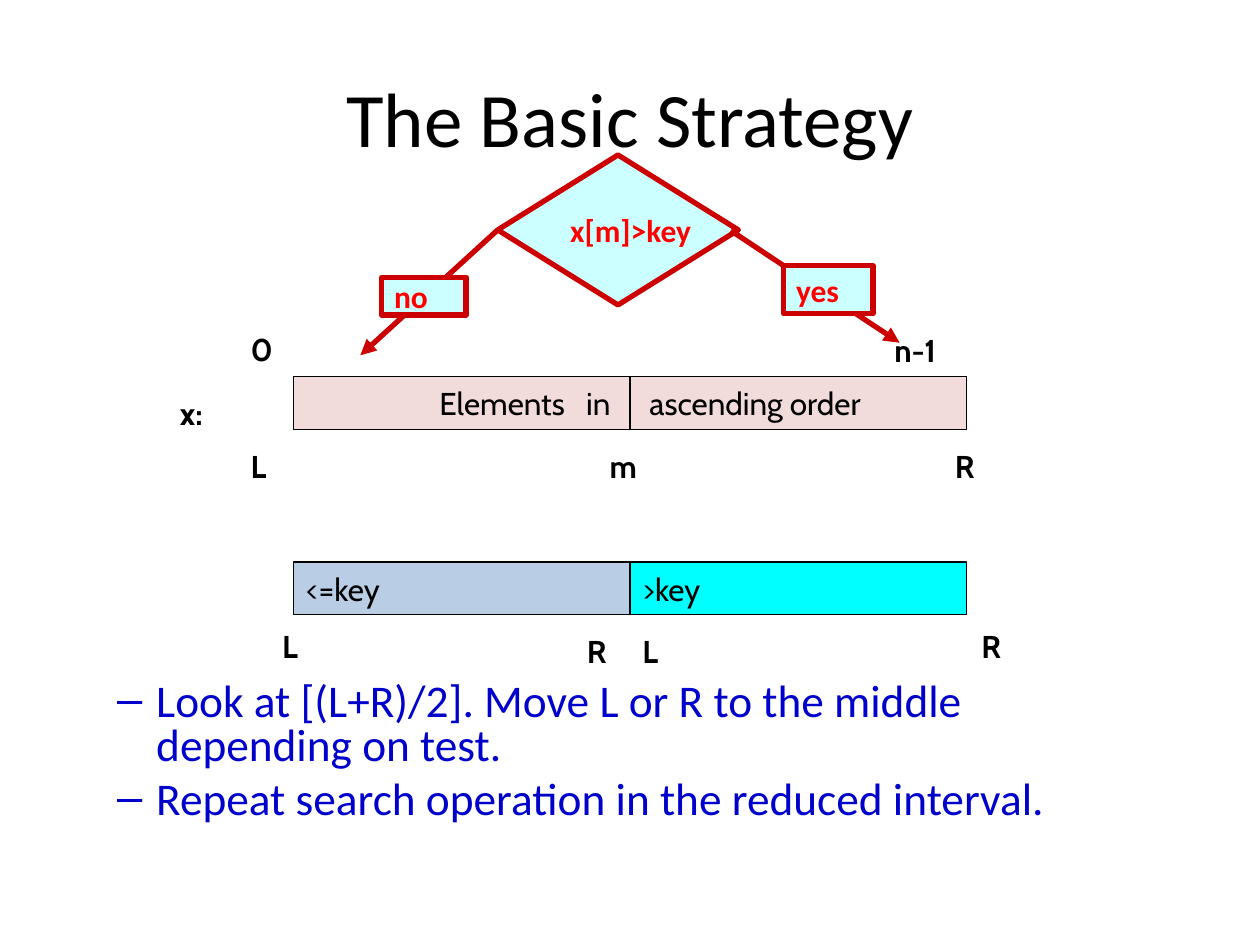
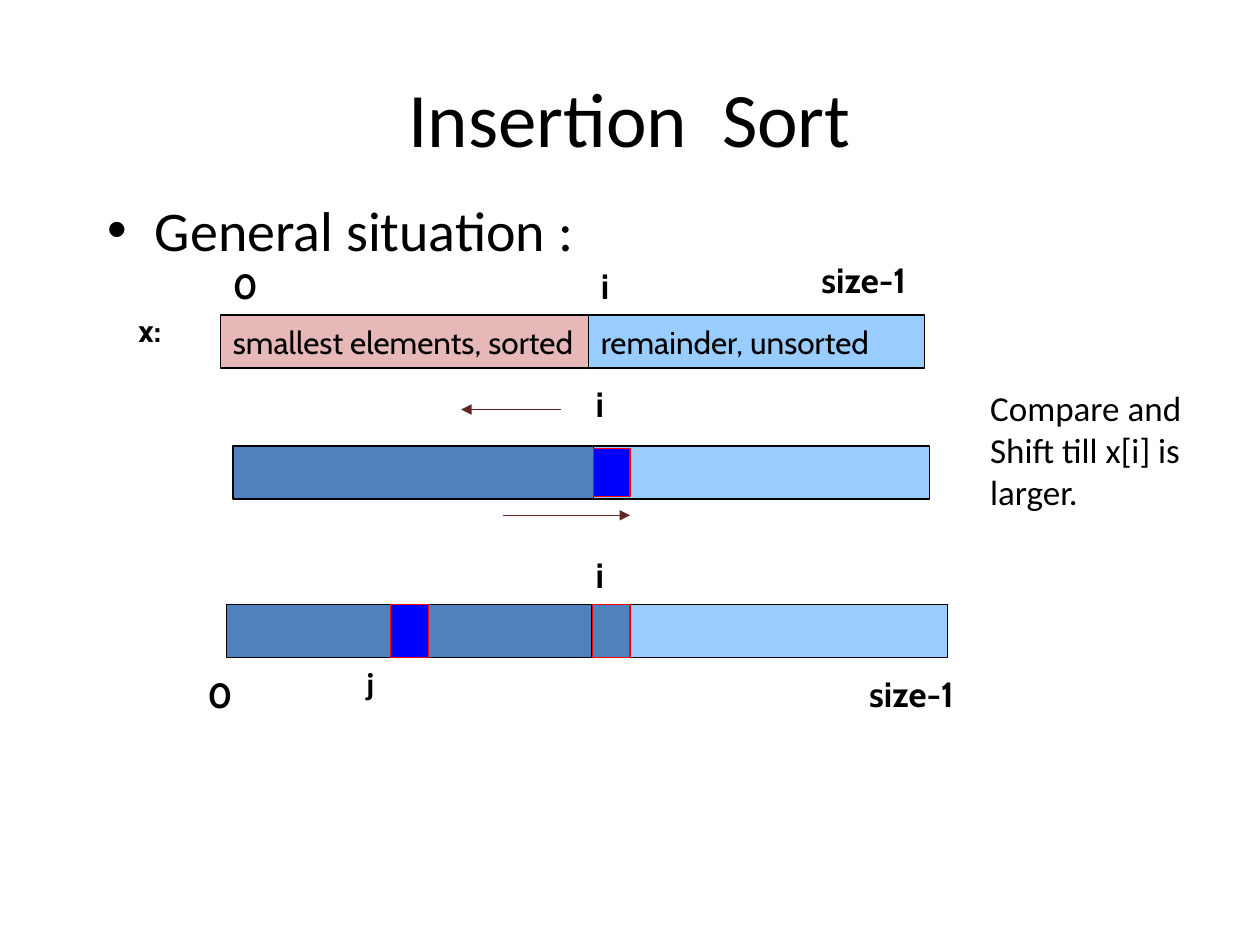
from lxml import etree
from pptx import Presentation
from pptx.dml.color import RGBColor
from pptx.enum.shapes import MSO_CONNECTOR, MSO_SHAPE
from pptx.enum.text import MSO_ANCHOR, MSO_AUTO_SIZE, PP_ALIGN
from pptx.oxml.ns import qn
from pptx.util import Inches, Pt

LEFT, CENTER, RIGHT = PP_ALIGN.LEFT, PP_ALIGN.CENTER, PP_ALIGN.RIGHT
MIDDLE = MSO_ANCHOR.MIDDLE
NO_FIT = MSO_AUTO_SIZE.NONE
STRAIGHT = MSO_CONNECTOR.STRAIGHT
RECTANGLE, DECISION = MSO_SHAPE.RECTANGLE, MSO_SHAPE.FLOWCHART_DECISION
LEFT_SIDE = 1

BLACK = RGBColor(0x00, 0x00, 0x00)
RED = RGBColor(0xFF, 0x00, 0x00)
DARK_RED = RGBColor(0xCC, 0x00, 0x00)
MAROON = RGBColor(0x63, 0x25, 0x23)
PALE_CYAN = RGBColor(0xCC, 0xFF, 0xFF)
CYAN = RGBColor(0x00, 0xFF, 0xFF)
PALE_PINK = RGBColor(0xF2, 0xDC, 0xDB)
PINK = RGBColor(0xE6, 0xB9, 0xB8)
PALE_BLUE = RGBColor(0xB9, 0xCD, 0xE5)
SKY_BLUE = RGBColor(0x99, 0xCC, 0xFF)
STEEL_BLUE = RGBColor(0x4F, 0x81, 0xBD)
BLUE = RGBColor(0x00, 0x00, 0xFF)
LIST_BLUE = RGBColor(0x00, 0x00, 0xCC)

BODY_FONT, LABEL_FONT = "Calibri", "Cabin"
CELL_HEIGHT = 0.42


def write_text(frame, text, font=LABEL_FONT, size=18, color=BLACK, bold=False,
               align=LEFT, wrap=False):
    frame.word_wrap = wrap
    frame.auto_size = NO_FIT
    for index, line in enumerate(text.split("\n")):
        paragraph = frame.add_paragraph() if index else frame.paragraphs[0]
        paragraph.alignment = align
        run = paragraph.add_run()
        run.text = line
        run.font.name = font
        run.font.size = Pt(size)
        run.font.bold = bold
        run.font.color.rgb = color


def place(shape, left, top, width, height):
    shape.left, shape.top = Inches(left), Inches(top)
    shape.width, shape.height = Inches(width), Inches(height)


def add_titled_slide(presentation, title):
    slide = presentation.slides.add_slide(presentation.slide_layouts[1])
    place(slide.shapes.title, 0.5, 0.3, 9, 1.25)
    frame = slide.shapes.title.text_frame
    frame.vertical_anchor = MIDDLE
    write_text(frame, title, font=BODY_FONT, size=44, align=CENTER, wrap=True)
    return slide


def fill_list(slide, box, text, bullet, level, margin, hanging, spacing, **text_format):
    body = slide.placeholders[1]
    place(body, *box)
    write_text(body.text_frame, text, font=BODY_FONT, wrap=True, **text_format)
    for index, paragraph in enumerate(body.text_frame.paragraphs):
        paragraph.level = level
        paragraph.line_spacing = spacing
        paragraph.space_before = Pt(6 if index else 0)
        properties = paragraph._p.get_or_add_pPr()
        properties.set("marL", str(Inches(margin)))
        properties.set("indent", str(-Inches(hanging)))
        etree.SubElement(properties, qn("a:buChar"), char=bullet)


def add_label(slide, text, left, top, width=0.5, height=0.43, bold=True, **text_format):
    label = slide.shapes.add_textbox(Inches(left), Inches(top), Inches(width), Inches(height))
    write_text(label.text_frame, text, bold=bold, **text_format)


def add_box(slide, box, fill, line=BLACK, line_width=0.75, text="", kind=RECTANGLE,
            **text_format):
    shape = slide.shapes.add_shape(kind, *map(Inches, box))
    shape.shadow.inherit = False
    shape.fill.solid()
    shape.fill.fore_color.rgb = fill
    shape.line.color.rgb = line
    shape.line.width = Pt(line_width)
    if text:
        shape.text_frame.vertical_anchor = MIDDLE
        write_text(shape.text_frame, text, **text_format)
    return shape


def add_arrow(slide, start, end, color, width):
    arrow = slide.shapes.add_connector(STRAIGHT, *map(Inches, start + end))
    arrow.line.color.rgb = color
    arrow.line.width = Pt(width)
    etree.SubElement(arrow.line._get_or_add_ln(), qn("a:tailEnd"), type="triangle")
    etree.SubElement(arrow._element.spPr, qn("a:effectLst"))
    return arrow


def add_array(slide, left, top, cells):
    placed = []
    for width, style in cells:
        placed.append(((left, top, width, CELL_HEIGHT), style))
        left += width
    for box, style in sorted(placed, key=lambda cell: cell[1].get("line") == RED):
        add_box(slide, box, **style)


def add_decision(slide, left, top):
    style = dict(fill=PALE_CYAN, line=DARK_RED, line_width=3, font=BODY_FONT,
                 color=RED, bold=True)
    diamond = add_box(slide, (left, top, 1.91, 1.19), text="x[m]>key", kind=DECISION, **style)
    no_arrow = add_arrow(slide, (left, top + 0.6), (left - 1.09, top + 1.59), DARK_RED, 3)
    no_arrow.begin_connect(diamond, LEFT_SIDE)
    add_arrow(slide, (left + 1.85, top + 0.6), (left + 3.19, top + 1.49), DARK_RED, 3)
    add_box(slide, (left - 0.92, top + 0.97, 0.67, 0.3), text="no", **style)
    add_box(slide, (left + 2.27, top + 0.88, 0.71, 0.38), text="yes", **style)


def add_search_array(slide, left, top):
    half = 2.67
    add_array(slide, left, top, [
        (half, dict(fill=PALE_PINK, text="Elements   in ", align=RIGHT)),
        (half, dict(fill=PALE_PINK, text=" ascending order")),
    ])
    for text, x, y in [("0", -0.44, -0.42), ("n-1", 4.67, -0.41), ("x:", -1, 0.09),
                       ("L", -0.44, 0.51), ("m", 2.41, 0.51), ("R", 5.15, 0.51)]:
        add_label(slide, text, left + x, top + y)


def add_halves(slide, left, top):
    half = 2.67
    add_array(slide, left, top, [
        (half, dict(fill=PALE_BLUE, text="<=key")),
        (half, dict(fill=CYAN, text=">key")),
    ])
    for text, x, y in [("L", -0.19, 0.47), ("R", 2.23, 0.51),
                       ("L", half, 0.51), ("R", 5.36, 0.47)]:
        add_label(slide, text, left + x, top + y)


def build_strategy_slide(presentation):
    slide = add_titled_slide(presentation, "The Basic Strategy")
    fill_list(slide, (0.33, 5.37, 8.5, 1.5),
              "Look at [(L+R)/2]. Move L or R to the middle depending on test.\n"
              "Repeat search operation in the reduced interval.",
              "–", level=1, margin=0.81, hanging=0.31, spacing=0.8,
              size=25.9, color=LIST_BLUE)
    add_decision(slide, 3.95, 1.23)
    add_search_array(slide, 2.33, 2.99)
    add_halves(slide, 2.33, 4.46)


def add_initial_array(slide, left, top):
    sorted_width = 2.92
    add_array(slide, left, top, [
        (sorted_width, dict(fill=PINK, text="smallest elements, sorted")),
        (2.67, dict(fill=SKY_BLUE, text="remainder, unsorted")),
    ])
    add_label(slide, "x:", left - 0.75, top - 0.08)
    for text, x, y in [("0", 0, -0.45), ("i", sorted_width, -0.45), ("size-1", 4.67, -0.5)]:
        add_label(slide, text, left + x, top + y, width=1, size=20)


def add_shifting_array(slide, left, top):
    current = left + 2.86
    add_array(slide, left, top, [
        (2.86, dict(fill=STEEL_BLUE)),
        (2.67, dict(fill=SKY_BLUE)),
    ])
    add_box(slide, (current, top + 0.02, 0.29, 0.38), BLUE, RED)
    add_label(slide, "i", current - 0.08, top - 0.55, size=20)
    for start, end, y in [(2.6, 1.81, -0.29), (2.14, 3.15, 0.55)]:
        add_arrow(slide, (left + start, top + y), (left + end, top + y), MAROON, 0.75)
    add_label(slide, "Compare and\nShift till x[i] is\nlarger.", left + 5.91, top - 0.52,
              width=1.86, height=1.11, font=BODY_FONT, size=20, bold=False)


def add_inserted_array(slide, left, top):
    add_array(slide, left, top, [
        (1.3, dict(fill=STEEL_BLUE)),
        (0.3, dict(fill=BLUE, line=RED)),
        (1.3, dict(fill=STEEL_BLUE)),
        (0.3, dict(fill=STEEL_BLUE, line=RED)),
        (2.52, dict(fill=SKY_BLUE)),
    ])
    for text, x, y in [("0", -0.25, 0.5), ("i", 2.83, -0.46), ("size-1", 5, 0.49)]:
        add_label(slide, text, left + x, top + y, width=1, size=20)
    add_label(slide, "j", left + 1.01, top + 0.42, font=BODY_FONT)


def build_insertion_slide(presentation):
    slide = add_titled_slide(presentation, "Insertion  Sort")
    fill_list(slide, (0.75, 1.5, 8.5, 0.72), "General situation :", "•",
              level=0, margin=0.38, hanging=0.38, spacing=1.0, size=32)
    add_initial_array(slide, 1.75, 2.5)
    add_shifting_array(slide, 1.85, 3.54)
    add_inserted_array(slide, 1.8, 4.8)


def main():
    presentation = Presentation()
    presentation.slide_width, presentation.slide_height = Inches(10), Inches(7.5)
    build_strategy_slide(presentation)
    build_insertion_slide(presentation)
    presentation.save("out.pptx")


if __name__ == "__main__":
    main()
